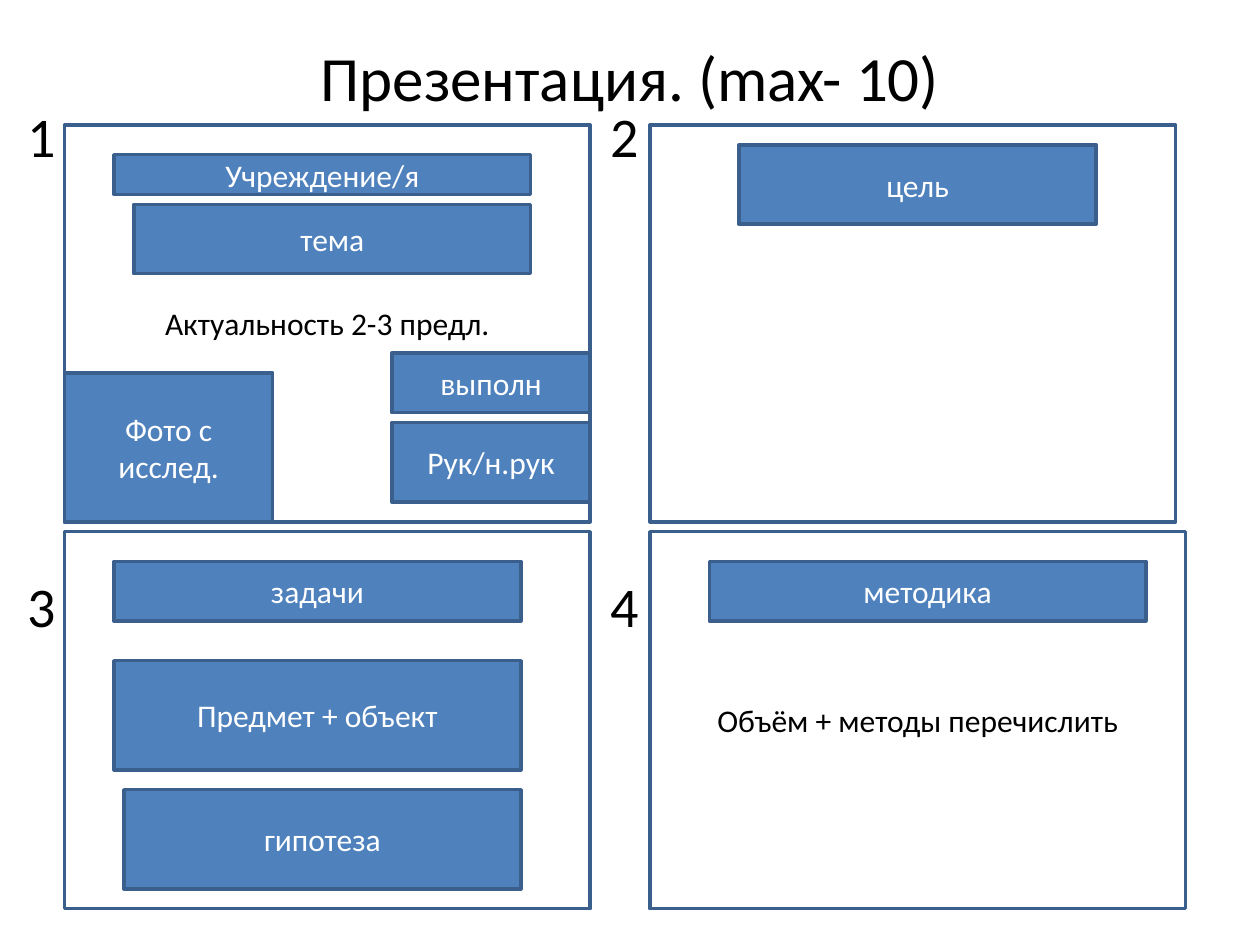
from lxml import etree
from pptx import Presentation
from pptx import util as u
from pptx.dml.color import RGBColor
from pptx.enum import shapes, text
from pptx.oxml.ns import qn

BLACK = RGBColor(0x00, 0x00, 0x00)
WHITE = RGBColor(0xFF, 0xFF, 0xFF)
BLUE = RGBColor(0x4F, 0x81, 0xBD)
DARK_BLUE = RGBColor(0x3A, 0x5F, 0x8C)

# Grid of the four panels, in centimetres
LEFT, RIGHT = 1.3, 13.1
TOP, BOTTOM = 2.52, 10.72


class Board:
    """Holds the style and the current page."""

    font = "Calibri"
    label_size = 18
    line_width = 2

    def __init__(self, page):
        self.page = page

    def format_para(self, para, size, color, align):
        para.alignment = align
        for span in para.runs:
            span.font.name = self.font
            span.font.size = u.Pt(size)
            span.font.color.rgb = color

    def rectangle(self, left, top, width, height, words, fill, color):
        box = self.page.shapes.add_shape(
            shapes.MSO_SHAPE.RECTANGLE, *map(u.Cm, (left, top, width, height)))
        box.shadow.inherit = False
        box.fill.solid()
        box.fill.fore_color.rgb = fill
        box.line.color.rgb = DARK_BLUE
        box.line.width = u.Pt(self.line_width)
        if words:
            frame = box.text_frame
            frame.text = words
            frame.word_wrap = True
            frame.vertical_anchor = text.MSO_ANCHOR.MIDDLE
            self.format_para(frame.paragraphs[0], self.label_size, color,
                             text.PP_ALIGN.CENTER)

    def panel(self, left, top, width, height, words=""):
        self.rectangle(left, top, width, height, words, WHITE, BLACK)

    def block(self, left, top, width, height, words):
        self.rectangle(left, top, width, height, words, BLUE, WHITE)

    def text_box(self, left, top, width, height, words, anchor):
        box = self.page.shapes.add_textbox(
            *map(u.Cm, (left, top, width, height)))
        frame = box.text_frame
        frame.text = words
        frame.word_wrap = True
        frame.vertical_anchor = anchor
        return frame

    def title(self, left, top, width, height, words):
        frame = self.text_box(left, top, width, height, words,
                              text.MSO_ANCHOR.MIDDLE)
        self.format_para(frame.paragraphs[0], 36, BLACK, text.PP_ALIGN.CENTER)

    def numbers(self, left, top, width, height, words, tab, gap):
        frame = self.text_box(left, top, width, height, words,
                              text.MSO_ANCHOR.TOP)
        for index, para in enumerate(frame.paragraphs):
            self.format_para(para, 32, BLACK, text.PP_ALIGN.LEFT)
            para.space_before = u.Pt(gap * index)
            stops = etree.SubElement(para._p.get_or_add_pPr(), qn("a:tabLst"))
            etree.SubElement(stops, qn("a:tab"), pos=str(u.Cm(tab)), algn="l")


def main():
    deck = Presentation()
    deck.slide_width, deck.slide_height = u.Cm(25.4), u.Cm(19.05)
    board = Board(deck.slides.add_slide(deck.slide_layouts[6]))

    # Title and panel numbers
    board.title(1.27, 0.53, 22.86, 2, "Презентация. (max- 10)")
    board.numbers(0.3, 1.92, 23.8, 15.1, "1\t2\n3\t4", tab=11.75, gap=230)

    # Panel 1: title page
    board.panel(LEFT, TOP, 10.6, 8, "Актуальность 2-3 предл.")
    board.block(LEFT, 7.52, 4.2, 3, "Фото с исслед.")
    board.block(2.3, 3.12, 8.4, 0.8, "Учреждение/я")
    board.block(2.7, 4.12, 8, 1.4, "тема")
    board.block(7.9, 7.12, 4, 1.2, "выполн")
    board.block(7.9, 8.52, 4, 1.6, "Рук/н.рук")

    # Panel 2: goal
    board.panel(RIGHT, TOP, 10.6, 8)
    board.block(14.9, 2.92, 7.2, 1.6, "цель")

    # Panel 4: methods
    board.panel(RIGHT, BOTTOM, 10.8, 7.6, "Объём + методы перечислить")
    board.block(14.3, 11.32, 8.8, 1.2, "методика")

    # Panel 3: tasks, subject and hypothesis
    board.panel(LEFT, BOTTOM, 10.6, 7.6)
    board.block(2.3, 11.32, 8.2, 1.2, "задачи")
    board.block(2.3, 13.32, 8.2, 2.2, "Предмет + объект")
    board.block(2.5, 15.92, 8, 2, "гипотеза")

    deck.save("out.pptx")


if __name__ == "__main__":
    main()
